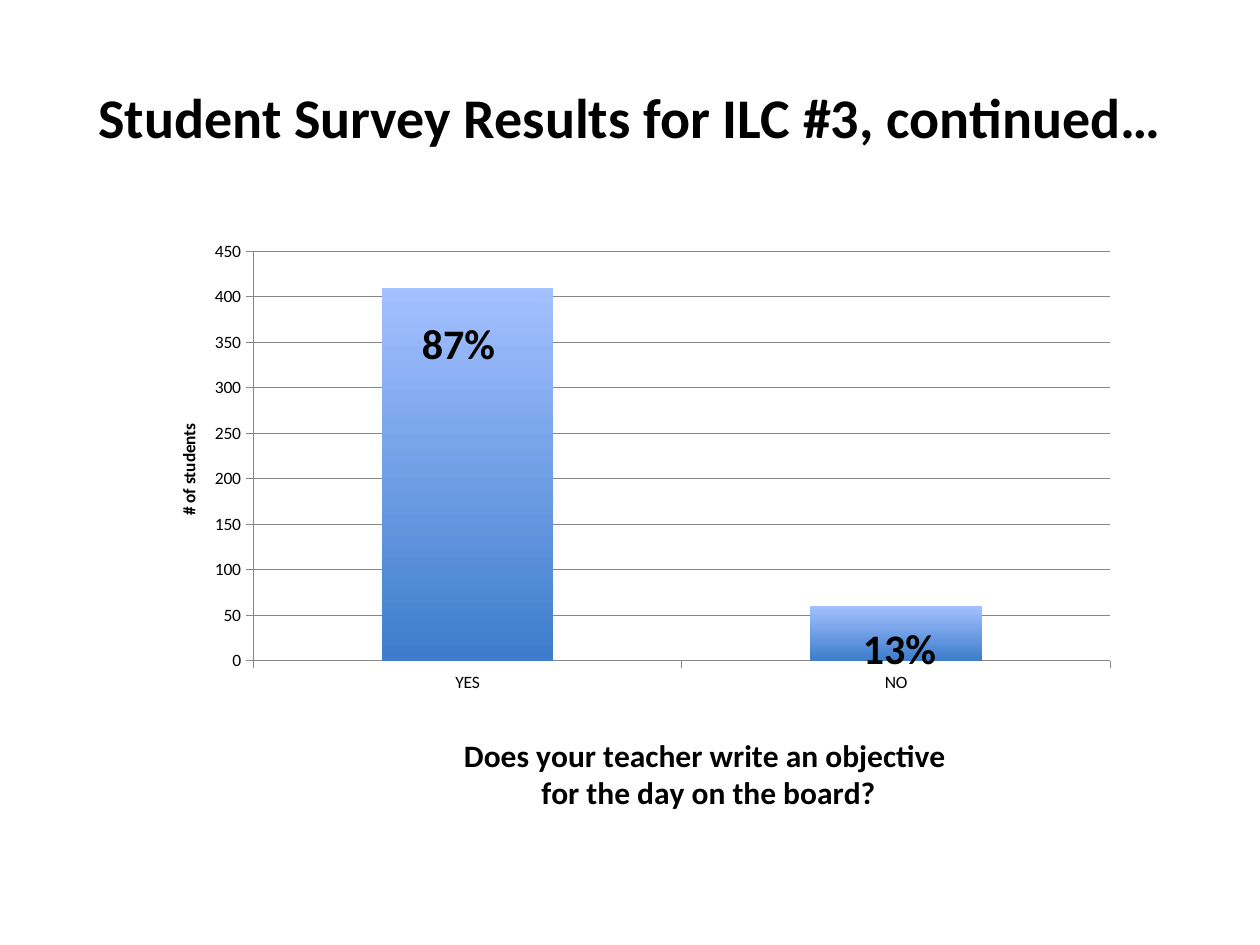
from dataclasses import dataclass

from lxml.etree import SubElement
from pptx import Presentation
from pptx.chart.data import CategoryChartData
from pptx.dml.color import RGBColor
from pptx.enum.chart import XL_CHART_TYPE as ChartType, XL_TICK_MARK as Tick
from pptx.enum.text import MSO_ANCHOR as Anchor, MSO_AUTO_SIZE as AutoSize, PP_ALIGN as Align
from pptx.oxml.ns import qn
from pptx.util import Pt


@dataclass(frozen=True)
class Theme:
    font: str = "Calibri"
    ink: str = "000000"
    grid: str = "868686"
    bar_bottom: str = "3D7DCB"
    bar_top: str = "A3C0FF"
    title: float = 32
    percent: float = 24
    question: float = 18
    axis: float = 10


@dataclass(frozen=True)
class Box:
    left: float
    top: float
    width: float
    height: float

    def points(self) -> tuple:
        return Pt(self.left), Pt(self.top), Pt(self.width), Pt(self.height)


@dataclass(frozen=True)
class Percent:
    text: str
    box: Box


THEME = Theme()
TITLE_BOX = Box(36, 21.6, 648, 90)
CHART_BOX = Box(82.8, 130.3, 563, 337.7)
PERCENTS = [
    Percent("87%", Box(234, 178, 57, 36)),
    Percent("13%", Box(486, 352, 57, 36)),
]


def rgb(value: str) -> RGBColor:
    return RGBColor.from_string(value)


def format_font(font, size: float, bold: bool) -> None:
    font.name, font.size, font.bold = THEME.font, Pt(size), bold
    font.color.rgb = rgb(THEME.ink)


def put_text(tf, text: str, *, size: float, bold: bool = True, align=None) -> None:
    """Write one paragraph for each line of text."""
    for i, line in enumerate(text.split("\n")):
        p = tf.add_paragraph() if i else tf.paragraphs[0]
        p.alignment = align
        r = p.add_run()
        r.text = line
        format_font(r.font, size, bold)


def place(element, index: int, **fractions) -> None:
    """Fix a chart part at fractions of the chart's size."""
    for old in element.findall(qn("c:layout")):
        element.remove(old)
    layout = SubElement(element, qn("c:layout"))
    element.insert(index, layout)
    manual = SubElement(layout, qn("c:manualLayout"))
    if "w" in fractions:
        SubElement(manual, qn("c:layoutTarget")).set("val", "inner")
    for name in ("x", "y"):
        SubElement(manual, qn(f"c:{name}Mode")).set("val", "edge")
    for name, value in fractions.items():
        SubElement(manual, qn(f"c:{name}")).set("val", str(value))


def style_axis(axis, title: str, size: float, x: float, y: float) -> None:
    axis.major_tick_mark, axis.minor_tick_mark = Tick.OUTSIDE, Tick.NONE
    axis.format.line.color.rgb = rgb(THEME.grid)
    format_font(axis.tick_labels.font, THEME.axis, False)
    put_text(axis.axis_title.text_frame, title, size=size, align=Align.CENTER)
    place(axis.axis_title._element, 1, x=x, y=y)


def add_survey_chart(slide, box: Box) -> None:
    data = CategoryChartData()
    data.categories = ["YES", "NO"]
    data.add_series("Series 1", [410, 60])
    chart = slide.shapes.add_chart(ChartType.COLUMN_CLUSTERED, *box.points(), data).chart
    chart.has_legend = chart.has_title = False
    format_font(chart.font, THEME.axis, False)

    # Columns, shaded from bottom to top
    plot = chart.plots[0]
    plot.gap_width, plot.vary_by_categories = 150, False
    fill = plot.series[0].format.fill
    fill.gradient()
    fill.gradient_angle = 90
    for stop, color in zip(fill.gradient_stops, (THEME.bar_bottom, THEME.bar_top)):
        stop.color.rgb = rgb(color)

    # Axes
    style_axis(chart.category_axis,
               "Does your teacher write an objective \nfor the day on the board?",
               THEME.question, 0.32, 0.86)
    values = chart.value_axis
    style_axis(values, "# of students", THEME.axis, 0.03, 0.33)
    values.minimum_scale, values.maximum_scale, values.major_unit = 0, 450, 50
    values.major_gridlines.format.line.color.rgb = rgb(THEME.grid)
    body = values.axis_title._element.find(".//" + qn("a:bodyPr"))
    body.set("rot", "-5400000")
    body.set("vert", "horz")
    place(chart._chartSpace.find(".//" + qn("c:plotArea")), 0,
          x=0.11, y=0.04, w=0.87, h=0.7)


def add_percent(slide, percent: Percent) -> None:
    tf = slide.shapes.add_textbox(*percent.box.points()).text_frame
    tf.word_wrap, tf.auto_size = False, AutoSize.SHAPE_TO_FIT_TEXT
    put_text(tf, percent.text, size=THEME.percent)


def main() -> None:
    prs = Presentation()
    prs.slide_width, prs.slide_height = Pt(720), Pt(540)
    slide = prs.slides.add_slide(prs.slide_layouts[5])

    # Chart with its percentages
    add_survey_chart(slide, CHART_BOX)
    for percent in PERCENTS:
        add_percent(slide, percent)

    # Title
    title = slide.shapes.title
    title.left, title.top, title.width, title.height = TITLE_BOX.points()
    title.text_frame.vertical_anchor = Anchor.MIDDLE
    put_text(title.text_frame, "Student Survey Results for ILC #3, continued…",
             size=THEME.title, align=Align.CENTER)

    prs.save("out.pptx")


if __name__ == "__main__":
    main()
